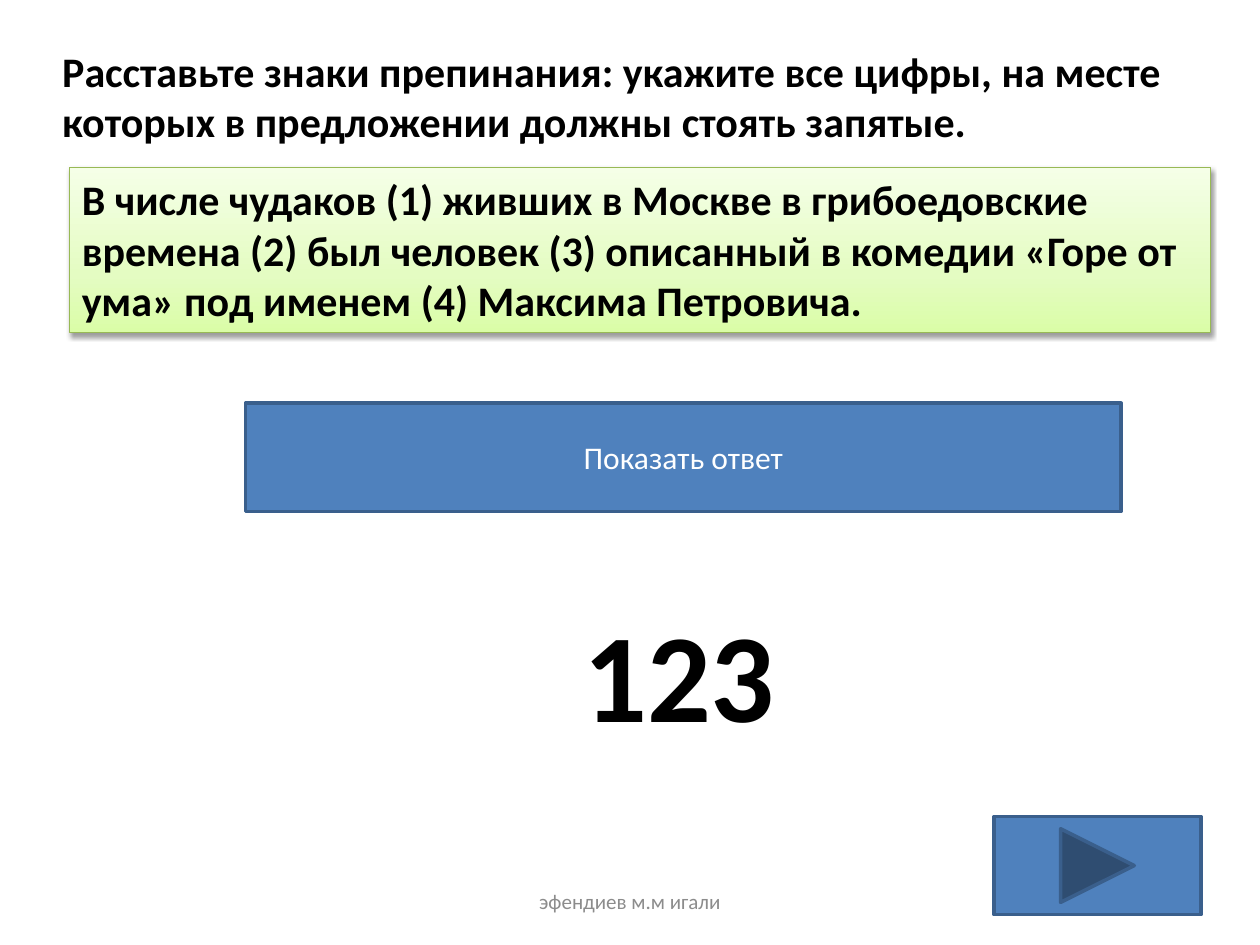
from dataclasses import dataclass
from lxml.etree import SubElement
from pptx import Presentation
from pptx.dml.color import RGBColor
from pptx.enum.shapes import MSO_SHAPE
from pptx.enum.text import MSO_ANCHOR, MSO_AUTO_SIZE, PP_ALIGN
from pptx.oxml.ns import qn
from pptx.util import Cm, Pt


@dataclass(frozen=True)
class Theme:
    font: str = "Calibri"
    text: str = "000000"
    button_text: str = "FFFFFF"
    footer_text: str = "8C8C8C"
    button: str = "4F81BD"
    button_line: str = "3A5F8C"
    sentence_line: str = "98B955"
    sentence_stops: tuple = ((0, "DAFDA7"), (35, "E4FCC2"), (100, "F5FFE7"))
    shadow: str = "000000"
    body_size: int = 24
    button_size: int = 18
    answer_size: int = 72
    footer_size: int = 12


theme = Theme()


def write_text(shape, text, size=theme.body_size, color=theme.text, bold=False,
               align=PP_ALIGN.LEFT, anchor=MSO_ANCHOR.TOP):
    frame = shape.text_frame
    frame.word_wrap = True
    frame.auto_size = MSO_AUTO_SIZE.NONE
    frame.vertical_anchor = anchor
    paragraph = frame.paragraphs[0]
    paragraph.alignment = align
    run = paragraph.add_run()
    run.text = text
    run.font.name = theme.font
    run.font.size = Pt(size)
    run.font.bold = bold
    run.font.color.rgb = RGBColor.from_string(color)


presentation = Presentation()
presentation.slide_width = Cm(25.4)
presentation.slide_height = Cm(19.05)
slide = presentation.slides.add_slide(presentation.slide_layouts.get_by_name("Title Only"))
shapes = slide.shapes

title = shapes.title
title.left, title.top, title.width, title.height = Cm(1), Cm(0.79), Cm(23.42), Cm(2.31)
write_text(title, "Расставьте знаки препинания: укажите все цифры, на месте которых "
                  "в предложении должны стоять запятые.", bold=True)

sentence = shapes.add_shape(MSO_SHAPE.RECTANGLE, Cm(1.4), Cm(3.38), Cm(23.01), Cm(3.33))
sentence.line.color.rgb = RGBColor.from_string(theme.sentence_line)
sentence.line.width = Pt(0.75)
sentence.fill.gradient()
sentence.fill.gradient_angle = 90
properties = sentence.fill._xPr
stop_list = properties.find(qn("a:gradFill")).find(qn("a:gsLst"))
for stop in list(stop_list):
    stop_list.remove(stop)
for position, color in theme.sentence_stops:
    stop = SubElement(stop_list, qn("a:gs"), pos=str(position * 1000))
    SubElement(stop, qn("a:srgbClr"), val=color)
sentence.shadow.inherit = False
shadow = SubElement(properties.find(qn("a:effectLst")), qn("a:outerShdw"),
                    blurRad=str(Pt(3.1)), dist=str(Pt(1.6)), dir="5400000", rotWithShape="0")
shadow_color = SubElement(shadow, qn("a:srgbClr"), val=theme.shadow)
SubElement(shadow_color, qn("a:alpha"), val="38000")
write_text(sentence, "В числе чудаков (1) живших в Москве в грибоедовские времена (2) был человек (3) "
                     "описанный в комедии «Горе от ума» под именем (4) Максима Петровича.", bold=True)

buttons = (
    (MSO_SHAPE.ACTION_BUTTON_CUSTOM, 4.95, 8.13, 17.65, 2.18, "Показать ответ"),
    (MSO_SHAPE.ACTION_BUTTON_FORWARD_OR_NEXT, 20.04, 16.46, 4.17, 1.98, ""),
)
for kind, left, top, width, height, label in buttons:
    button = shapes.add_shape(kind, Cm(left), Cm(top), Cm(width), Cm(height))
    button.shadow.inherit = False
    button.fill.solid()
    button.fill.fore_color.rgb = RGBColor.from_string(theme.button)
    button.line.color.rgb = RGBColor.from_string(theme.button_line)
    button.line.width = Pt(2)
    if label:
        write_text(button, label, size=theme.button_size, color=theme.button_text,
                   align=PP_ALIGN.CENTER, anchor=MSO_ANCHOR.MIDDLE)

answer = shapes.add_textbox(Cm(4.95), Cm(11.91), Cm(17.48), Cm(3.33))
write_text(answer, "123", size=theme.answer_size, bold=True, align=PP_ALIGN.CENTER)

footer = shapes.add_textbox(Cm(8.68), Cm(17.66), Cm(8.04), Cm(1.01))
write_text(footer, "эфендиев м.м игали", size=theme.footer_size, color=theme.footer_text,
           align=PP_ALIGN.CENTER, anchor=MSO_ANCHOR.MIDDLE)

presentation.save("out.pptx")
